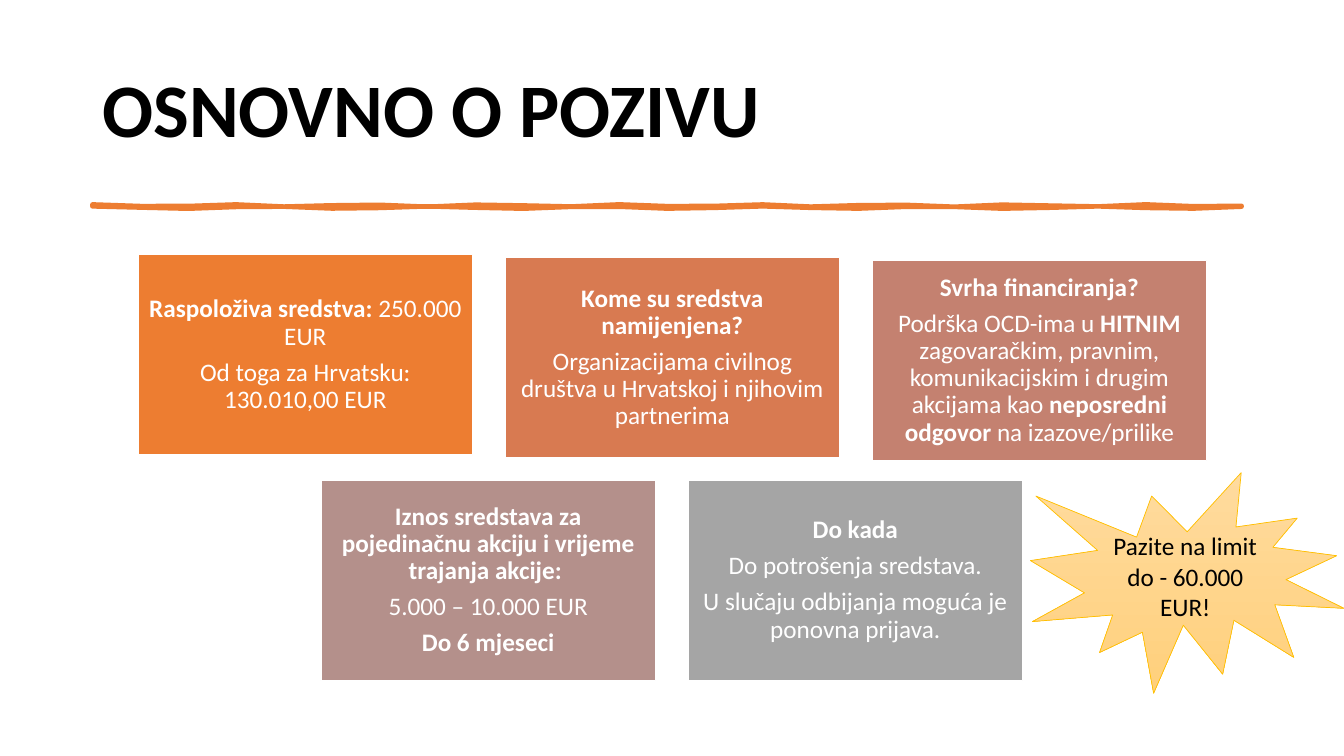
from dataclasses import dataclass
from math import sin

from pptx import Presentation
from pptx.dml.color import RGBColor
from pptx.enum.shapes import MSO_SHAPE
from pptx.enum.text import MSO_ANCHOR, PP_ALIGN
from pptx.util import Cm, Pt


@dataclass(frozen=True)
class Theme:
    font: str = "Calibri"
    title_size: float = 54
    body_size: float = 18
    paragraph_gap: float = 6.3
    black: str = "000000"
    white: str = "FFFFFF"
    accent: str = "ED7D31"
    burst_top: str = "FFDB9E"
    burst_bottom: str = "FFD07C"
    burst_line: str = "FFC000"


THEME = Theme()
CARD_WIDTH, CARD_HEIGHT, CARD_STEP = 8.43, 5.05, 9.25

# Each card: fill colour, then paragraphs of (text, bold) runs.
TOP_CARDS = [
    ("ED7D31", [
        [("Raspoloživa sredstva: ", True), ("250.000 EUR", False)],
        [("Od toga za Hrvatsku: 130.010,00 EUR", False)],
    ]),
    ("D87A51", [
        [("Kome su sredstva namijenjena?", True)],
        [("Organizacijama civilnog društva u Hrvatskoj i njihovim partnerima", False)],
    ]),
    ("C48170", [
        [("Svrha financiranja?", True)],
        [("Podrška OCD-ima u ", False), ("HITNIM ", True),
         ("zagovaračkim, pravnim, komunikacijskim i drugim akcijama kao ", False),
         ("neposredni odgovor ", True), ("na izazove/prilike", False)],
    ]),
]
BOTTOM_CARDS = [
    ("B4908B", [
        [("Iznos sredstava za pojedinačnu akciju i vrijeme trajanja akcije: ", True)],
        [("5.000 – 10.000 EUR", False)],
        [("Do 6 mjeseci", True)],
    ]),
    ("A5A5A5", [
        [("Do kada", True)],
        [("Do potrošenja sredstava.", False)],
        [("U slučaju odbijanja moguća je ponovna prijava.", False)],
    ]),
]


def rgb(value):
    return RGBColor.from_string(value)


def write_text(shape, paragraphs, size, color, align, spacing=1.0, gap=0, inset=None):
    frame = shape.text_frame
    frame.word_wrap = True
    frame.vertical_anchor = MSO_ANCHOR.MIDDLE
    if inset is not None:
        frame.margin_left = frame.margin_right = Cm(inset)
        frame.margin_top = frame.margin_bottom = Cm(inset)
    for index, runs in enumerate(paragraphs):
        paragraph = frame.add_paragraph() if index else frame.paragraphs[0]
        paragraph.alignment = align
        paragraph.line_spacing = spacing
        paragraph.space_after = Pt(gap)
        for text, bold in runs:
            run = paragraph.add_run()
            run.text = text
            run.font.name = THEME.font
            run.font.size = Pt(size)
            run.font.bold = bold
            run.font.color.rgb = rgb(color)


def outline(shape, color, width):
    shape.shadow.inherit = False
    shape.line.color.rgb = rgb(color)
    shape.line.width = Pt(width)


def add_title(slide, left, top, width, height):
    title = slide.shapes.add_textbox(Cm(left), Cm(top), Cm(width), Cm(height))
    write_text(title, [[("OSNOVNO O POZIVU", True)]], THEME.title_size,
               THEME.black, PP_ALIGN.LEFT, spacing=0.9)


def add_brush_rule(slide, left, top, width, thickness):
    """Draw a hand-brushed line as a thin band with two uneven edges."""
    steps = 24
    xs = [left + width * step / steps for step in range(steps + 1)]
    upper = [(x, top + 0.03 * sin(1.9 * x)) for x in xs]
    lower = [(x, top + thickness + 0.03 * sin(1.5 * x + 1)) for x in xs]
    points = [(Cm(x), Cm(y)) for x, y in upper + lower[::-1]]
    builder = slide.shapes.build_freeform(*points[0])
    builder.add_line_segments(points[1:], close=True)
    rule = builder.convert_to_shape()
    rule.fill.solid()
    rule.fill.fore_color.rgb = rgb(THEME.accent)
    outline(rule, THEME.accent, 3.25)


def add_card_row(slide, cards, left, top, drop=0):
    """Place cards at equal steps, each lower than the last by drop."""
    for index, (color, paragraphs) in enumerate(cards):
        card = slide.shapes.add_shape(
            MSO_SHAPE.RECTANGLE, Cm(left + index * CARD_STEP), Cm(top + index * drop),
            Cm(CARD_WIDTH), Cm(CARD_HEIGHT))
        card.fill.solid()
        card.fill.fore_color.rgb = rgb(color)
        outline(card, THEME.white, 1)
        write_text(card, paragraphs, THEME.body_size, THEME.white, PP_ALIGN.CENTER,
                   spacing=0.9, gap=THEME.paragraph_gap, inset=0.18)


def add_burst(slide, left, top, width, height):
    burst = slide.shapes.add_shape(
        MSO_SHAPE.EXPLOSION1, Cm(left), Cm(top), Cm(width), Cm(height))
    burst.fill.gradient()
    burst.fill.gradient_angle = 270
    for stop, color in zip(burst.fill.gradient_stops,
                           (THEME.burst_top, THEME.burst_bottom)):
        stop.color.rgb = rgb(color)
    outline(burst, THEME.burst_line, 0.5)
    write_text(burst, [[("Pazite na limit do - 60.000 EUR!", False)]],
               THEME.body_size, THEME.black, PP_ALIGN.CENTER)


def main():
    presentation = Presentation()
    presentation.slide_width, presentation.slide_height = Cm(33.87), Cm(19.05)
    slide = presentation.slides.add_slide(presentation.slide_layouts[6])
    add_title(slide, 2.33, 1.01, 29.21, 3.68)
    add_brush_rule(slide, 2.33, 5.18, 28.96, 0.05)
    add_card_row(slide, TOP_CARDS, 3.48, 6.42, drop=0.07)
    add_card_row(slide, BOTTOM_CARDS, 8.09, 12.1)
    add_burst(slide, 25.97, 11.91, 7.9, 5.56)
    presentation.save("out.pptx")


if __name__ == "__main__":
    main()
